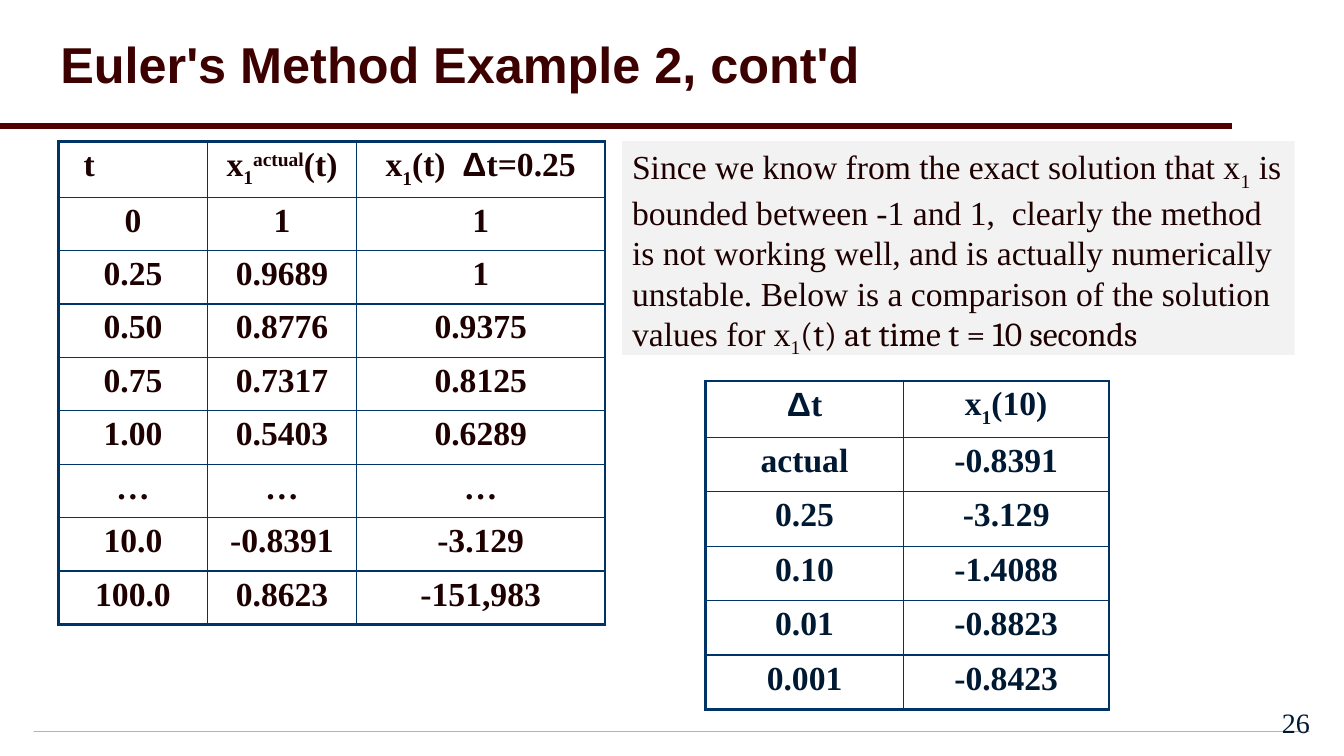
from lxml.etree import SubElement
from pptx import Presentation
from pptx.dml.color import RGBColor
from pptx.enum.shapes import MSO_CONNECTOR, MSO_SHAPE
from pptx.enum.text import MSO_ANCHOR, PP_ALIGN
from pptx.oxml.ns import qn
from pptx.util import Inches, Pt

COLORS = {
    "title": "3C0000", "rule": "500000", "body": "1E0000", "navy": "001933",
    "border": "003366", "note": "F2F2F2", "violet": "CC99FF", "pale": "F3EBFF",
}
SERIF = "Times New Roman"
WIDTH, HEIGHT = Inches(13.33), Inches(7.5)
GRID = 100
SUB, SUPER = -25000, 30000

STEP_ROWS = [
    [[("t",)],
     [("x",), ("1", SUB), ("actual", SUPER), ("(t)",)],
     [("x",), ("1", SUB), ("(t)  ",), ("Δ", 0, "Arial"), ("t=0.25",)]],
    ["0", "1", "1"],
    ["0.25", "0.9689", "1"],
    ["0.50", "0.8776", "0.9375"],
    ["0.75", "0.7317", "0.8125"],
    ["1.00", "0.5403", "0.6289"],
    ["…", "…", "…"],
    ["10.0", "-0.8391", "-3.129"],
    ["100.0", "0.8623", "-151,983"],
]
COMPARISON_ROWS = [
    [[("Δ", 0, "Arial"), ("t",)], [("x",), ("1", SUB), ("(10)",)]],
    ["actual", "-0.8391"],
    ["0.25", "-3.129"],
    ["0.10", "-1.4088"],
    ["0.01", "-0.8823"],
    ["0.001", "-0.8423"],
]
NOTE = [
    ("Since we know from the exact solution that x",), ("1", SUB),
    (" is bounded between -1 and 1,  clearly the method is not working well, "
     "and is actually numerically unstable. Below is a comparison of the "
     "solution values for x",),
    ("1", SUB), ("(t) at time t = 10 seconds", 0, "Cambria"),
]


def color(name):
    """Return the named colour."""
    return RGBColor.from_string(COLORS[name])


def place(left, top, width, height):
    """Turn grid columns and rows into slide lengths."""
    column, row = WIDTH / GRID, HEIGHT / GRID
    return [round(n) for n in (left * column, top * row, width * column, height * row)]


def add_runs(paragraph, runs, size, tint, bold=False):
    """Add (text, baseline, font) runs to a paragraph."""
    for text, baseline, name in ((*run, 0, SERIF)[:3] if len(run) == 1
                                 else (*run, SERIF)[:3] for run in runs):
        run = paragraph.add_run()
        run.text = text
        run.font.size, run.font.bold, run.font.name = Pt(size), bold, name
        run.font.color.rgb = color(tint)
        if baseline:
            run.font._element.set("baseline", str(baseline))


def add_text(slide, box, runs, size, tint, bold=False, anchor=MSO_ANCHOR.MIDDLE):
    """Add a wrapped text box and return its shape."""
    shape = slide.shapes.add_textbox(*place(*box))
    frame = shape.text_frame
    frame.word_wrap, frame.vertical_anchor = True, anchor
    add_runs(frame.paragraphs[0], runs, size, tint, bold)
    return shape


def add_border(cell, side, width):
    """Draw one side of a table cell."""
    line = SubElement(cell._tc.get_or_add_tcPr(), qn(f"a:ln{side}"), w=str(Pt(width)))
    SubElement(SubElement(line, qn("a:solidFill")), qn("a:srgbClr"), val=COLORS["border"])


def add_grid_table(slide, box, rows, column_shares, row_shares, tint):
    """Add a ruled table with a heavier outer frame."""
    left, top, width, height = place(*box)
    last_row, last_column = len(rows) - 1, len(column_shares) - 1
    table = slide.shapes.add_table(last_row + 1, last_column + 1,
                                   left, top, width, height).table
    table.first_row = table.horz_banding = False
    for column, share in zip(table.columns, column_shares):
        column.width = round(width * share / sum(column_shares))
    for row, share in zip(table.rows, row_shares):
        row.height = round(height * share / sum(row_shares))
    for i, values in enumerate(rows):
        for j, value in enumerate(values):
            cell = table.cell(i, j)
            outer = {"L": j == 0, "R": j == last_column, "T": i == 0, "B": i == last_row}
            for side, is_outer in outer.items():
                add_border(cell, side, 2.25 if is_outer else 1)
            cell.fill.background()
            paragraph = cell.text_frame.paragraphs[0]
            paragraph.alignment = PP_ALIGN.CENTER
            runs = [(value,)] if isinstance(value, str) else value
            add_runs(paragraph, runs, 24, tint, True)
    return table


def add_header(slide, box):
    """Add the title and the rule along the bottom of its box."""
    title = add_text(slide, box, [("Euler's Method Example 2, cont'd", 0, "Arial")],
                     36, "title", True)
    title.text_frame.paragraphs[0].line_spacing = 0.9
    left, top, right, bottom = place(0, box[1], 91.67, box[1] + box[3])
    rule = slide.shapes.add_connector(MSO_CONNECTOR.STRAIGHT, left, bottom, right, bottom)
    rule.line.width, rule.line.color.rgb = Pt(4), color("rule")
    SubElement(rule._element.spPr, qn("a:effectLst"))


def add_note(slide, box):
    """Add the shaded remark on stability."""
    note = add_text(slide, box, NOTE, 24, "body", anchor=MSO_ANCHOR.TOP)
    note.fill.solid()
    note.fill.fore_color.rgb = color("note")


def add_footer(slide, box):
    """Add the thin gradient bar and the page number."""
    left, top, width, height = box
    bar = slide.shapes.add_shape(MSO_SHAPE.RECTANGLE, *place(left, top, width, 0.13))
    bar.shadow.inherit = False
    bar.line.fill.background()
    bar.fill.gradient()
    for stop, name in zip(bar.fill.gradient_stops, ("violet", "pale")):
        stop.color.rgb = color(name)
    gradient = bar._element.spPr.find(qn("a:gradFill"))
    gradient.remove(gradient.find(qn("a:lin")))
    shading = SubElement(gradient, qn("a:path"), attrib={"path": "shape"})
    SubElement(shading, qn("a:fillToRect"), l="50000", t="50000", r="50000", b="50000")
    number = add_text(slide, (93.17, top - 4.4, 5.03, 6.67), [("26",)], 20, "navy")
    number.text_frame.paragraphs[0].alignment = PP_ALIGN.RIGHT


def build_slide(presentation):
    """Lay out the example slide."""
    slide = presentation.slides.add_slide(presentation.slide_layouts[6])
    add_footer(slide, (2.48, 96.67, 94.97, 3.33))
    add_header(slide, (3.75, 1.07, 91.52, 15.6))
    steps = add_grid_table(slide, (4.35, 18.67, 40.66, 63.6), STEP_ROWS,
                           (3, 3, 5), [1] * len(STEP_ROWS), "body")
    time_header = steps.cell(0, 0)
    time_header.margin_left = Inches(0.25)
    time_header.text_frame.paragraphs[0].alignment = PP_ALIGN.LEFT
    add_note(slide, (46.29, 18.67, 50.04, 28.27))
    add_grid_table(slide, (52.51, 50.4, 30.01, 43.47), COMPARISON_ROWS,
                   (0.49, 0.51), [0.56] + [0.54] * 5, "navy")


def main():
    """Create and save the presentation."""
    presentation = Presentation()
    presentation.slide_width, presentation.slide_height = WIDTH, HEIGHT
    build_slide(presentation)
    presentation.save("out.pptx")


if __name__ == "__main__":
    main()
